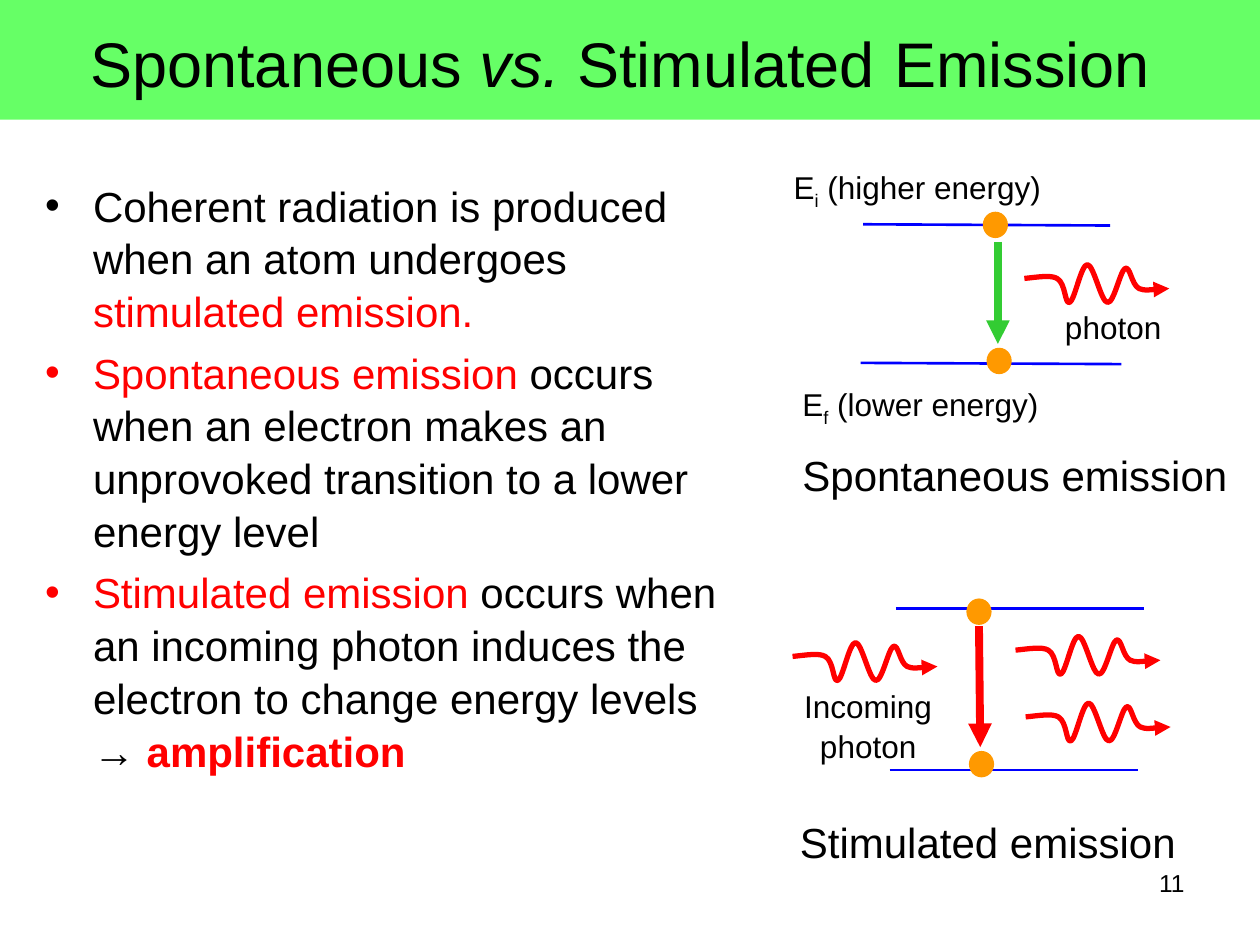
from functools import partial

from lxml.etree import SubElement
from pptx import Presentation
from pptx.dml.color import RGBColor
from pptx.enum.shapes import MSO_CONNECTOR, MSO_SHAPE
from pptx.enum.text import MSO_ANCHOR, PP_ALIGN
from pptx.oxml.ns import qn
from pptx.util import Inches, Pt

BLACK = RGBColor(0x00, 0x00, 0x00)
RED = RGBColor(0xFF, 0x00, 0x00)
BLUE = RGBColor(0x00, 0x00, 0xFF)
GREEN = RGBColor(0x33, 0xCC, 0x33)
ORANGE = RGBColor(0xFF, 0x99, 0x00)
BANNER = RGBColor(0x66, 0xFF, 0x66)
FONT = "Arial"

# The slide is a grid of 100 columns by 75 rows; a box is (column, row, columns, rows).
COLUMNS, ROWS = 100, 75
CELL = Inches(0.1)
ELECTRON = (2, 2.1)
WAVE_START = (0, 1.1)
# Each curve: two control points and an end point, in cells from the wave's corner.
WAVE_CURVES = [
    [(1.0, 1.0), (2.1, 0.8), (2.6, 1.1)],
    [(3.3, 1.5), (3.2, 3.2), (3.6, 3.0)],
    [(4.0, 2.8), (4.5, 0), (5.0, 0)],
    [(5.5, 0), (6.1, 3.0), (6.6, 3.0)],
    [(7.1, 3.1), (7.6, 0.5), (8.0, 0.3)],
    [(8.4, 0.1), (8.5, 1.6), (9.1, 1.9)],
    [(9.6, 2.1), (11.0, 1.9), (11.5, 1.9)],
]


def cells(*counts):
    return [round(count * CELL) for count in counts]


def inside(box, column, row):
    """Slide position of a point given in cells from the corner of a box."""
    return cells(box[0] + column, box[1] + row)


def add_runs(paragraph, runs, size):
    """Add (text, options) runs; options are color, bold, italic, size and baseline."""
    for text, options in runs:
        run = paragraph.add_run()
        run.text = text
        font = run.font
        font.name = FONT
        font.size = Pt(options.get("size", size))
        font.color.rgb = options.get("color", BLACK)
        font.bold = options.get("bold", False)
        font.italic = options.get("italic", False)
        if "baseline" in options:
            run._r.get_or_add_rPr().set("baseline", str(options["baseline"] * 1000))


def add_label(slide, box, at, size, lines, width, height, align=PP_ALIGN.LEFT):
    shape = slide.shapes.add_textbox(*inside(box, *at), *cells(width, height))
    frame = shape.text_frame
    frame.word_wrap = False
    for index, runs in enumerate(lines):
        paragraph = frame.paragraphs[0] if index == 0 else frame.add_paragraph()
        paragraph.alignment = align
        paragraph.line_spacing = 1.05
        add_runs(paragraph, runs, size)


def style_line(shape, color, width, arrow=False):
    shape.line.color.rgb = color
    shape.line.width = Pt(width)
    if arrow:
        SubElement(shape.line._get_or_add_ln(), qn("a:tailEnd"), type="triangle")


def add_line(slide, box, start, end, color, width, arrow=False):
    line = slide.shapes.add_connector(
        MSO_CONNECTOR.STRAIGHT, *inside(box, *start), *inside(box, *end))
    style_line(line, color, width, arrow)
    SubElement(line._element.spPr, qn("a:effectLst"))


def add_electron(slide, box, at):
    electron = slide.shapes.add_shape(
        MSO_SHAPE.OVAL, *inside(box, *at), *cells(*ELECTRON))
    electron.shadow.inherit = False
    electron.fill.solid()
    electron.fill.fore_color.rgb = ORANGE
    electron.line.fill.background()


def add_photon_wave(slide, box, at):
    corner = (box[0] + at[0], box[1] + at[1])
    builder = slide.shapes.build_freeform(*inside(corner, *WAVE_START))
    for curve in WAVE_CURVES:
        builder.add_line_segments([inside(corner, *point) for point in curve], close=False)
    wave = builder.convert_to_shape()
    wave.shadow.inherit = False
    wave.fill.background()
    style_line(wave, RED, 3, arrow=True)
    # Turn every three straight segments into one Bezier curve.
    outline = wave._element.find(".//" + qn("a:path"))
    segments = outline.findall(qn("a:lnTo"))
    for first in range(0, len(segments), 3):
        bezier = SubElement(outline, qn("a:cubicBezTo"))
        for segment in segments[first:first + 3]:
            bezier.append(segment[0])
            outline.remove(segment)


def add_title(slide, box):
    banner = slide.shapes.add_shape(MSO_SHAPE.RECTANGLE, *cells(*box))
    banner.shadow.inherit = False
    banner.fill.solid()
    banner.fill.fore_color.rgb = BANNER
    banner.line.fill.background()
    banner.text_frame.vertical_anchor = MSO_ANCHOR.MIDDLE
    paragraph = banner.text_frame.paragraphs[0]
    paragraph.alignment = PP_ALIGN.CENTER
    add_runs(paragraph, [
        ("Spontaneous ", {}), ("vs.", {"italic": True}), (" Stimulated", {}),
        (" ", {"size": 40}), ("Emission", {}), (" ", {"size": 40})], 36)


def add_bullets(slide, box, bullets):
    frame = slide.shapes.add_textbox(*cells(*box)).text_frame
    frame.word_wrap = True
    indent = Inches(0.38)
    for index, runs in enumerate(bullets):
        paragraph = frame.paragraphs[0] if index == 0 else frame.add_paragraph()
        paragraph.space_before = Pt(4.8)
        paragraph.line_spacing = 1.05
        properties = paragraph._p.get_or_add_pPr()
        properties.set("marL", str(indent))
        properties.set("indent", str(-indent))
        SubElement(properties, qn("a:buFont"), typeface=FONT)
        SubElement(properties, qn("a:buChar"), char="•")
        add_runs(paragraph, runs, 24)


def add_spontaneous_panel(slide, box):
    line, label = partial(add_line, slide, box), partial(add_label, slide, box)
    line((6.5, 5.1), (26.1, 5.2), BLUE, 1.5)
    line((6.3, 16.1), (27, 16.2), BLUE, 1.5)
    line((17.2, 6.5), (17.2, 14.6), GREEN, 4.5, arrow=True)
    for at in [(16, 4.1), (16.3, 14.9)]:
        add_electron(slide, box, at)
    add_photon_wave(slide, box, (19.3, 8.3))
    for letter, name, at in [("i", " (higher energy)", (0, 0)),
                             ("f", " (lower energy)", (0.7, 17.2))]:
        label(at, 18, [[("E", {}), (letter, {"baseline": -25}), (name, {})]], 22, 4)
    label((21.5, 11.1), 18, [[("photon", {})]], 9.7, 4, PP_ALIGN.CENTER)
    label((0.7, 22.3), 24, [[("Spontaneous emission", {})]], 35.8, 5)


def add_stimulated_panel(slide, box):
    line, label = partial(add_line, slide, box), partial(add_label, slide, box)
    line((8.6, 0.8), (28.3, 0.8), BLUE, 1.5)
    line((8.1, 13.6), (27.8, 13.6), BLUE, 1.5)
    for at in [(14.2, 0), (14.4, 12.1)]:
        add_electron(slide, box, at)
    line((15.2, 2.2), (15.3, 11.8), RED, 4.5, arrow=True)
    for at in [(0.4, 3.5), (18.9, 8.3), (18.1, 3)]:
        add_photon_wave(slide, box, at)
    label((0, 16.6), 24, [[("Stimulated emission", {})]], 31.9, 5)
    label((0.3, 6.4), 18, [[("Incoming", {})], [("photon", {})]], 12.2, 7, PP_ALIGN.CENTER)


def main():
    presentation = Presentation()
    presentation.slide_width, presentation.slide_height = cells(COLUMNS, ROWS)
    slide = presentation.slides.add_slide(presentation.slide_layouts[6])
    red = {"color": RED}
    add_title(slide, (0, 0, COLUMNS, 9.5))
    add_bullets(slide, (2.6, 13.6, 56.1, 46.9), [
        [("Coherent radiation is produced when an atom undergoes ", {}),
         ("stimulated emission.", red)],
        [("Spontaneous emission", red),
         (" occurs when an electron makes an unprovoked transition to a lower energy level", {})],
        [("Stimulated emission", red),
         (" occurs when an incoming photon induces the electron to change energy levels → ", {}),
         ("amplification", {"color": RED, "bold": True})],
    ])
    add_stimulated_panel(slide, (62.5, 47.5, 31.9, 21.6))
    add_spontaneous_panel(slide, (62, 12.7, 36.5, 27.3))
    add_label(slide, (71.7, 68.3), (0, 0), 14, [[("11", {})]], 23.3, 5.2, PP_ALIGN.RIGHT)
    presentation.save("out.pptx")


if __name__ == "__main__":
    main()
